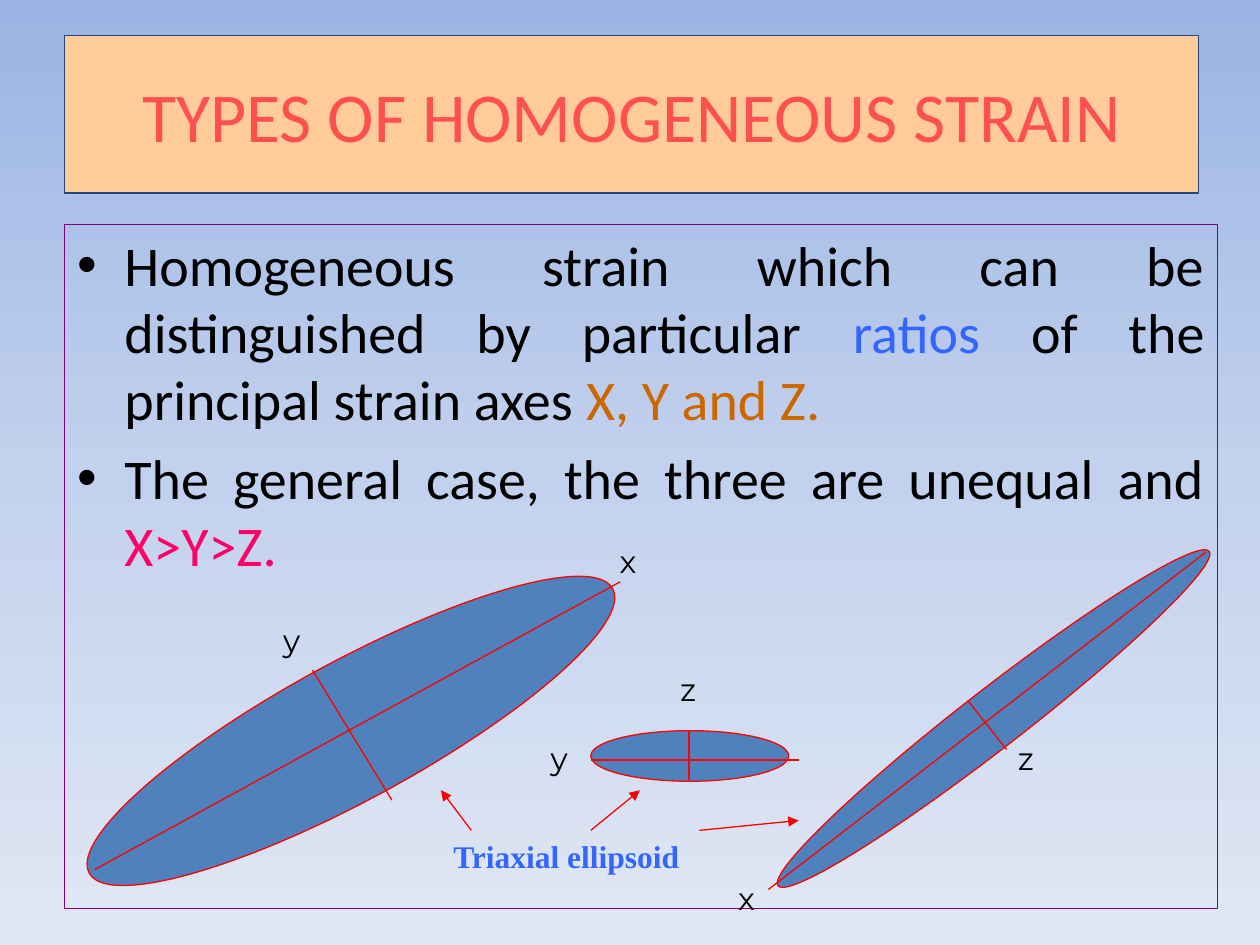
from copy import deepcopy
from dataclasses import dataclass

from lxml import etree
from pptx import Presentation
from pptx import util as u
from pptx.dml.color import RGBColor
from pptx.enum import shapes, text
from pptx.oxml.ns import qn


@dataclass(frozen=True)
class Theme:
    sky: tuple = ("9AB5E4", "C2D1ED", "E1E8F5")
    peach: str = "FFCC99"
    navy: str = "1F497D"
    purple: str = "800080"
    coral: str = "FF5050"
    black: str = "000000"
    blue: str = "3366FF"
    orange: str = "CC6600"
    pink: str = "FF0066"
    ellipse: str = "4F81BD"
    red: str = "FF0000"
    main_font: str = "Calibri"
    label_font: str = "Montserrat"
    caption_font: str = "Times New Roman"
    title_size: int = 40
    body_size: int = 32
    label_size: int = 18
    thin: float = 0.25
    line: float = 0.75


def rgb(color):
    return RGBColor.from_string(color)


class StrainSlide:
    def __init__(self, prs, theme):
        self.t = theme
        self.s = prs.slides.add_slide(prs.slide_layouts[1])

    def background(self):
        fill = self.s.background.fill
        fill.gradient()
        fill.gradient_angle = 270
        # The default gradient has two stops; add a middle one
        stops = fill.gradient_stops
        first = fill._fill._gradFill.find(qn("a:gsLst"))[0]
        first.addnext(deepcopy(first))
        stops = fill.gradient_stops
        for stop, color, pos in zip(stops, self.t.sky, (0, 0.5, 1)):
            stop.color.rgb = rgb(color)
            stop.position = pos

    def outline(self, sp, color, width):
        sp.line.color.rgb = rgb(color)
        sp.line.width = u.Pt(width)

    def font(self, p, name, size, color=None, bold=None):
        p.font.name, p.font.size, p.font.bold = name, u.Pt(size), bold
        if color:
            p.font.color.rgb = rgb(color)

    def place(self, sp, x, y, w, h):
        sp.left, sp.top, sp.width, sp.height = map(u.Cm, (x, y, w, h))

    def title(self, words, *box):
        sp = self.s.shapes.title
        self.place(sp, *box)
        sp.fill.solid()
        sp.fill.fore_color.rgb = rgb(self.t.peach)
        self.outline(sp, self.t.navy, self.t.line)
        tf = sp.text_frame
        tf.text = words
        tf.auto_size = text.MSO_AUTO_SIZE.NONE
        self.font(tf.paragraphs[0], self.t.main_font, self.t.title_size, self.t.coral)

    def body(self, bullets, *box):
        sp = self.s.placeholders[1]
        self.place(sp, *box)
        self.outline(sp, self.t.purple, self.t.thin)
        tf = sp.text_frame
        tf.auto_size = text.MSO_AUTO_SIZE.NONE
        for i, runs in enumerate(bullets):
            p = tf.add_paragraph() if i else tf.paragraphs[0]
            p.alignment = text.PP_ALIGN.JUSTIFY
            self.font(p, self.t.main_font, self.t.body_size)
            for words, color in runs:
                r = p.add_run()
                r.text = words
                r.font.color.rgb = rgb(color)

    def ellipse(self, x, y, w, h, angle=0):
        sp = self.s.shapes.add_shape(shapes.MSO_SHAPE.OVAL, *map(u.Cm, (x, y, w, h)))
        sp.rotation = angle
        sp.shadow.inherit = False
        sp.fill.solid()
        sp.fill.fore_color.rgb = rgb(self.t.ellipse)
        self.outline(sp, self.t.red, self.t.line)

    def line(self, x1, y1, x2, y2, arrow=False):
        sp = self.s.shapes.add_connector(
            shapes.MSO_CONNECTOR.STRAIGHT, *map(u.Cm, (x1, y1, x2, y2)))
        self.outline(sp, self.t.red, self.t.line)
        if arrow:
            etree.SubElement(sp.line._get_or_add_ln(), qn("a:tailEnd"), type="triangle")
        etree.SubElement(sp._element.spPr, qn("a:effectLst"))

    def label(self, words, x, y, w=0.9, font=None, color=None, bold=None):
        sp = self.s.shapes.add_textbox(*map(u.Cm, (x, y, w, 1.02)))
        tf = sp.text_frame
        tf.word_wrap = False
        tf.auto_size = text.MSO_AUTO_SIZE.SHAPE_TO_FIT_TEXT
        tf.text = words
        self.font(tf.paragraphs[0], font or self.t.label_font, self.t.label_size,
                  color or self.t.black, bold)


def main():
    prs = Presentation()
    prs.slide_width, prs.slide_height = u.Cm(25.4), u.Cm(19.05)
    t = Theme()
    slide = StrainSlide(prs, t)
    slide.background()

    # Title and bullets
    slide.title("TYPES OF HOMOGENEOUS STRAIN", 1.3, 0.71, 22.86, 3.18)
    slide.body([
        [("Homogeneous strain which can be distinguished by particular ", t.black),
         ("ratios", t.blue),
         (" of the principal strain axes ", t.black),
         ("X, Y and Z.", t.orange)],
        [("The general case, the three are unequal and ", t.black),
         ("X>Y>Z.", t.pink)],
    ], 1.3, 4.52, 23.24, 13.79)

    # Sections of the ellipsoid: xy, yz, xz
    for section in ((1.07, 13.34, 12.01, 2.79, 331.5),
                    (11.91, 14.73, 3.99, 1.02),
                    (14.53, 13.89, 11, 1.19, 322.2)):
        slide.ellipse(*section)

    # Principal axes, two for each section
    for axis in ((1.91, 17.53, 12.5, 11.73), (6.3, 13.51, 7.9, 16.13),
                 (11.91, 15.32, 16.1, 15.32), (13.89, 14.73, 13.89, 15.72),
                 (24.31, 11.13, 15.49, 17.93), (19.51, 14.12, 20.29, 15.11)):
        slide.line(*axis)

    # Axis names
    for name, x, y in (("y", 5.46, 12.4), ("x", 12.24, 10.8),
                       ("z", 13.46, 13.39), ("y", 10.85, 14.78),
                       ("x", 14.63, 17.6), ("z", 20.27, 14.78)):
        slide.label(name, x, y)

    # Caption with an arrow to each section
    caption_top = 16.74
    slide.label("Triaxial ellipsoid", 8.89, caption_top, 5.11,
                t.caption_font, t.blue, True)
    for x1, x2, y2 in ((9.5, 8.89, 15.93), (11.91, 12.9, 15.93), (14.1, 16.1, 16.54)):
        slide.line(x1, caption_top, x2, y2, arrow=True)

    prs.save("out.pptx")


if __name__ == "__main__":
    main()
